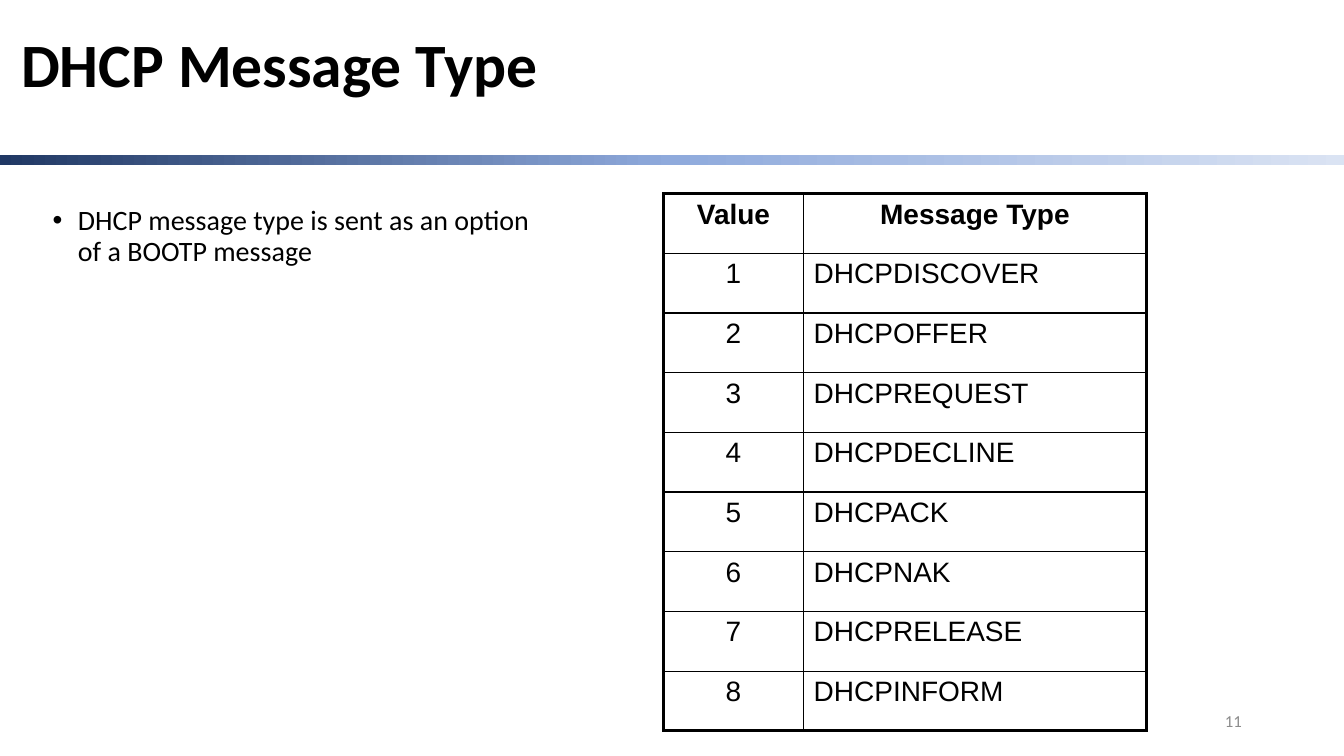
from copy import deepcopy
from dataclasses import dataclass

from lxml import etree
from pptx import Presentation
from pptx import util as u
from pptx.dml.color import RGBColor
from pptx.enum import shapes, text
from pptx.oxml.ns import qn


@dataclass(frozen=True)
class Theme:
    heading_font: str = "Calibri"
    table_font: str = "Arial"
    ink: str = "000000"
    muted: str = "8C8C8C"
    band: tuple = ("203864", "8FAADC", "DAE3F3")
    title_size: int = 44
    text_size: int = 20
    number_size: int = 12
    thick: float = 2.25
    thin: float = 1


MESSAGE_TYPES = ["DHCPDISCOVER", "DHCPOFFER", "DHCPREQUEST", "DHCPDECLINE",
                 "DHCPACK", "DHCPNAK", "DHCPRELEASE", "DHCPINFORM"]
ROWS = [("Value", "Message Type")]
ROWS += [(str(value), name) for value, name in enumerate(MESSAGE_TYPES, 1)]


class SlideBuilder:
    def __init__(self, page, theme):
        self.page = page
        self.theme = theme

    def place(self, box, left, top, width, height):
        box.left, box.top = u.Cm(left), u.Cm(top)
        box.width, box.height = u.Cm(width), u.Cm(height)

    def set_text(self, frame, words, size, font=None, color=None, bold=False,
                 align=text.PP_ALIGN.LEFT):
        frame.text = words
        para = frame.paragraphs[0]
        para.alignment = align
        para.font.name = font or self.theme.heading_font
        para.font.size = u.Pt(size)
        para.font.bold = bold
        para.font.color.rgb = RGBColor.from_string(color or self.theme.ink)
        return para

    def band(self, left, top, width, height):
        """Draw the gradient rule under the title, with evenly spaced stops."""
        bar = self.page.shapes.add_shape(
            shapes.MSO_SHAPE.RECTANGLE, *map(u.Cm, (left, top, width, height)))
        bar.shadow.inherit = False
        bar.line.fill.background()
        bar.fill.gradient()
        bar.fill.gradient_angle = 0
        stop_list = next(bar.element.iter(qn("a:gsLst")))
        stop_list.insert(1, deepcopy(stop_list[0]))
        colors = self.theme.band
        for index, (stop, color) in enumerate(zip(bar.fill.gradient_stops, colors)):
            stop.position = index / (len(colors) - 1)
            stop.color.rgb = RGBColor.from_string(color)

    def title(self, words, *area):
        box = self.page.shapes.title
        self.place(box, *area)
        frame = box.text_frame
        frame.vertical_anchor = text.MSO_ANCHOR.MIDDLE
        frame.auto_size = text.MSO_AUTO_SIZE.NONE
        para = self.set_text(frame, words, self.theme.title_size, bold=True)
        para.line_spacing = 0.9

    def bullet(self, words, *area):
        box = self.page.placeholders[1]
        self.place(box, *area)
        box.text_frame.auto_size = text.MSO_AUTO_SIZE.NONE
        para = self.set_text(box.text_frame, words, self.theme.text_size)
        para.line_spacing = 0.9
        para.space_before = u.Pt(10)
        indent = u.Cm(0.64)
        properties = para._p.get_or_add_pPr()
        properties.set("marL", str(indent))
        properties.set("indent", str(-indent))
        font = properties.makeelement(qn("a:buFont"), {"typeface": "Arial"})
        mark = properties.makeelement(qn("a:buChar"), {"char": "•"})
        properties.find(qn("a:spcBef")).addnext(font)
        font.addnext(mark)

    def borders(self, cell, outer):
        """Rule all four sides of a cell, thick on the table's outer edges."""
        properties = cell._tc.get_or_add_tcPr()
        for index, (side, is_outer) in enumerate(outer.items()):
            weight = self.theme.thick if is_outer else self.theme.thin
            line = properties.makeelement(qn(f"a:ln{side}"), {"w": str(u.Pt(weight))})
            fill = etree.SubElement(line, qn("a:solidFill"))
            etree.SubElement(fill, qn("a:srgbClr"), val=self.theme.ink)
            properties.insert(index, line)

    def table(self, rows, left, top, widths, height):
        grid = self.page.shapes.add_table(
            len(rows), len(widths), u.Cm(left), u.Cm(top),
            u.Cm(sum(widths)), u.Cm(height)).table
        for column, width in zip(grid.columns, widths):
            column.width = u.Cm(width)
        last_row, last_column = len(rows) - 1, len(widths) - 1
        for r, row in enumerate(rows):
            for c, words in enumerate(row):
                cell = grid.cell(r, c)
                cell.fill.background()
                centred = r == 0 or c == 0
                self.set_text(cell.text_frame, words, self.theme.text_size,
                              self.theme.table_font, bold=r == 0,
                              align=text.PP_ALIGN.CENTER if centred else text.PP_ALIGN.LEFT)
                self.borders(cell, {"L": c == 0, "R": c == last_column,
                                    "T": r == 0, "B": r == last_row})

    def page_number(self, words, *area):
        box = self.page.shapes.add_textbox(*map(u.Cm, area))
        box.text_frame.word_wrap = True
        box.text_frame.vertical_anchor = text.MSO_ANCHOR.MIDDLE
        self.set_text(box.text_frame, words, self.theme.number_size,
                      color=self.theme.muted, align=text.PP_ALIGN.RIGHT)


def main():
    deck = Presentation()
    deck.slide_width, deck.slide_height = u.Cm(33.87), u.Cm(19.05)
    page = deck.slides.add_slide(deck.slide_layouts[1])
    builder = SlideBuilder(page, Theme())
    builder.band(0, 3.91, 33.87, 0.24)
    builder.title("DHCP Message Type", 0.28, 0.43, 33.3, 2.54)
    builder.bullet("DHCP message type is sent as an option of a BOOTP message",
                   1.07, 5.08, 12.9, 13.49)
    builder.table(ROWS, 16.72, 4.88, (3.53, 8.64), 13.54)
    builder.page_number("11", 23.93, 17.65, 7.62, 1.02)
    deck.save("out.pptx")


if __name__ == "__main__":
    main()
